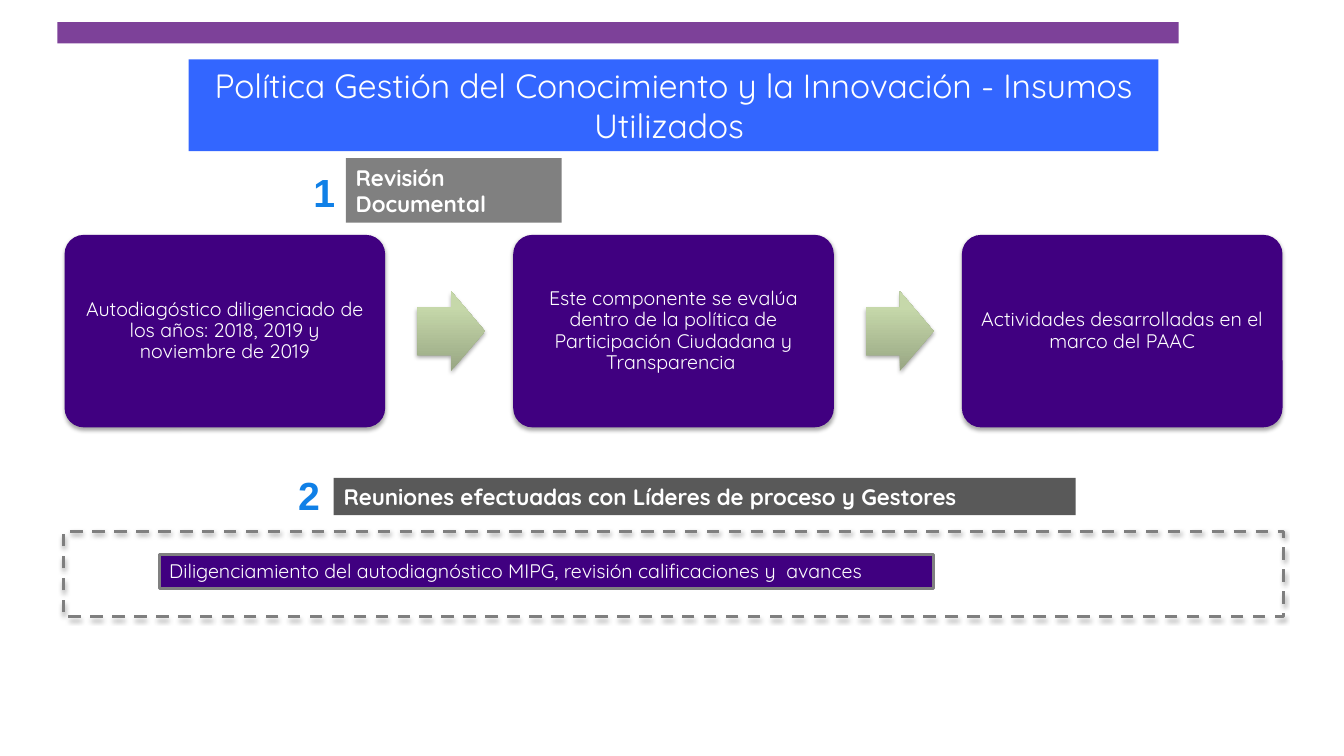
"""Build the slide on the inputs used for the knowledge management policy."""
from dataclasses import dataclass
from typing import Optional

from lxml import etree
from pptx import Presentation
from pptx.dml.color import RGBColor
from pptx.enum import dml, shapes, text
from pptx.oxml import ns
from pptx.util import Inches, Pt

COLOURS = {
    "band": "7D4199", "title": "3366FF", "step": "400080", "white": "FFFFFF",
    "grey": "808080", "dark_grey": "595959", "dash": "7F7F7F", "number": "1080E7",
    "arrow_dark": "98A683", "arrow_light": "C6D8AA", "shadow": "000000",
}
SHAPE = shapes.MSO_SHAPE
STEP_LEFT, STEP_PITCH, ARROW_OFFSET = 0.64, 4.45, 3.5


@dataclass
class Panel:
    """A shape with optional fill, outline, shadow and text."""
    left: float
    top: float
    width: float
    height: float
    fill: Optional[str] = None
    line: Optional[str] = None
    line_width: float = 2
    dashed: bool = False
    shadow: bool = False
    kind: int = SHAPE.RECTANGLE
    adjustments: tuple[float, ...] = ()
    words: str = ""
    size: float = 14
    bold: bool = False
    font: str = "Quicksand"
    colour: str = "white"
    align: int = text.PP_ALIGN.LEFT
    anchor: int = text.MSO_ANCHOR.MIDDLE
    margin: float = 0.1
    spacing: float = 1.0


def rgb(name: str) -> RGBColor:
    """Return a named colour."""
    return RGBColor.from_string(COLOURS[name])


def write(box, panel: Panel) -> None:
    """Put the panel's words in a box and format them."""
    frame = box.text_frame
    frame.text = panel.words
    frame.word_wrap = True
    frame.auto_size = text.MSO_AUTO_SIZE.NONE
    frame.vertical_anchor = panel.anchor
    frame.margin_left = frame.margin_right = Inches(panel.margin)
    frame.margin_top = frame.margin_bottom = Inches(0.05)
    para = frame.paragraphs[0]
    para.alignment = panel.align
    para.line_spacing = panel.spacing
    para.font.name = panel.font
    para.font.size = Pt(panel.size)
    para.font.bold = panel.bold
    para.font.color.rgb = rgb(panel.colour)


def add_shadow(box) -> None:
    """Give a shape a soft shadow just below it."""
    effects = box._element.spPr.find(ns.qn("a:effectLst"))
    outer = etree.SubElement(effects, ns.qn("a:outerShdw"), blurRad="40000",
                             dist="23000", dir="5400000", rotWithShape="0")
    colour = etree.SubElement(outer, ns.qn("a:srgbClr"), val=COLOURS["shadow"])
    etree.SubElement(colour, ns.qn("a:alpha"), val="35000")


def add_panel(page, panel: Panel):
    """Draw a panel and return its shape."""
    box = page.shapes.add_shape(panel.kind, Inches(panel.left), Inches(panel.top),
                                Inches(panel.width), Inches(panel.height))
    box.shadow.inherit = False
    for index, value in enumerate(panel.adjustments):
        box.adjustments[index] = value
    if panel.fill:
        box.fill.solid()
        box.fill.fore_color.rgb = rgb(panel.fill)
    else:
        box.fill.background()
    if panel.line:
        box.line.color.rgb = rgb(panel.line)
        box.line.width = Pt(panel.line_width)
        if panel.dashed:
            box.line.dash_style = dml.MSO_LINE.DASH
    else:
        box.line.fill.background()
    if panel.shadow:
        add_shadow(box)
    if panel.words:
        write(box, panel)
    return box


def add_arrow(page, left: float) -> None:
    """Draw a green arrow between two steps."""
    arrow = add_panel(page, Panel(left, 2.89, 0.67, 0.79, shadow=True,
                                  kind=SHAPE.RIGHT_ARROW, adjustments=(0.6, 0.5)))
    arrow.fill.gradient()
    arrow.fill.gradient_angle = 90
    stops = ((0, "arrow_dark"), (0.8, "arrow_light"))
    for stop, (position, name) in zip(arrow.fill.gradient_stops, stops):
        stop.position = position
        stop.color.rgb = rgb(name)


def add_title(page) -> None:
    """Fill and place the title placeholder."""
    title = page.shapes.title
    title.left, title.top = Inches(1.87), Inches(0.59)
    title.width, title.height = Inches(9.62), Inches(0.91)
    title.fill.solid()
    title.fill.fore_color.rgb = rgb("title")
    write(title, Panel(
        1.87, 0.59, 9.62, 0.91, size=24, align=text.PP_ALIGN.CENTER,
        anchor=text.MSO_ANCHOR.TOP,
        words="Política Gestión del Conocimiento y la Innovación - Insumos Utilizados "))


def add_number(page, left: float, top: float, width: float, words: str) -> None:
    """Write the large number of a section."""
    box = page.shapes.add_textbox(Inches(left), Inches(top), Inches(width), Inches(0.57))
    write(box, Panel(left, top, width, 0.57, words=words, size=28, bold=True,
                     font="Arial", colour="number", anchor=text.MSO_ANCHOR.TOP))


STEPS = (
    "Autodiagóstico diligenciado de los años: 2018, 2019 y noviembre de 2019",
    "Este componente se evalúa dentro de la política de Participación Ciudadana y Transparencia ",
    "Actividades desarrolladas en el marco del PAAC",
)
PANELS = (
    Panel(0.57, 0.22, 11.12, 0.21, "band"),
    Panel(1.58, 5.5, 7.68, 0.34, "step", "grey", anchor=text.MSO_ANCHOR.TOP,
          words="Diligenciamiento del autodiagnóstico MIPG, revisión calificaciones y  avances"),
    Panel(3.43, 1.57, 2.14, 0.64, "grey", words="Revisión Documental", size=16, bold=True),
    Panel(3.31, 4.74, 7.36, 0.37, "dark_grey", size=16, bold=True,
          words="Reuniones efectuadas con Líderes de proceso y Gestores"),
    Panel(0.63, 5.27, 12.1, 0.85, line="dash", line_width=2.25, dashed=True, shadow=True),
)


def main() -> None:
    """Build and save the deck."""
    deck = Presentation()
    deck.slide_width, deck.slide_height = Inches(13.33), Inches(7.5)
    page = deck.slides.add_slide(deck.slide_layouts.get_by_name("Title Only"))
    add_title(page)
    for index, words in enumerate(STEPS):
        left = STEP_LEFT + index * STEP_PITCH
        add_panel(page, Panel(left, 2.33, 3.18, 1.91, "step", shadow=True,
                              kind=SHAPE.ROUNDED_RECTANGLE, adjustments=(0.1,),
                              words=words, align=text.PP_ALIGN.CENTER,
                              margin=0.12, spacing=0.9))
        if index < len(STEPS) - 1:
            add_arrow(page, left + ARROW_OFFSET)
    for panel in PANELS:
        add_panel(page, panel)
    add_number(page, 3.01, 1.62, 0.31, "1")
    add_number(page, 2.86, 4.63, 0.36, "2")
    deck.save("out.pptx")


if __name__ == "__main__":
    main()
